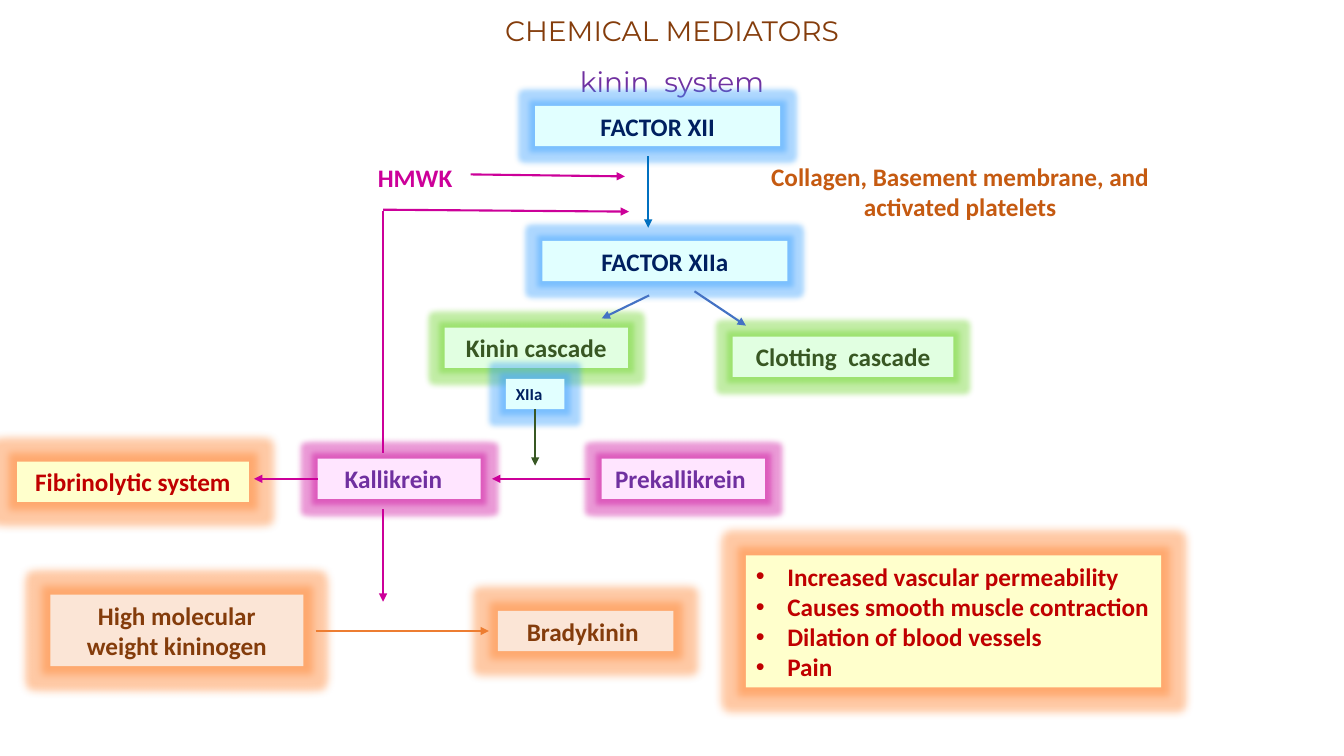
from dataclasses import dataclass

from lxml.etree import SubElement
from pptx import Presentation
from pptx.dml.color import RGBColor
from pptx.enum.shapes import MSO_CONNECTOR as Connector, MSO_SHAPE as Shape
from pptx.enum.text import MSO_ANCHOR as Anchor, MSO_AUTO_SIZE as AutoSize, PP_ALIGN as Align
from pptx.oxml.ns import qn
from pptx.util import Pt


@dataclass(frozen=True)
class Style:
    fill: str
    ink: str
    glow: str
    radius: float


@dataclass(frozen=True)
class Theme:
    factor = Style("E1FFFF", "002060", "5B9BD5", 8)
    cascade = Style("E1FFE1", "385723", "70AD47", 8)
    enzyme = Style("FFE5FF", "7030A0", "CC0099", 8)
    effect = Style("FFFFCC", "C00000", "ED7D31", 12)
    kinin = Style("FBE5D6", "843C0B", "ED7D31", 12)
    title_ink: str = "843C0B"
    subtitle_ink: str = "7030A0"
    trigger_ink: str = "C55A11"
    magenta: str = "CC0099"
    activation: str = "0070C0"
    branch: str = "4472C4"
    conversion: str = "385723"
    release: str = "ED7D31"
    title_font: str = "Montserrat"
    body_font: str = "Calibri"
    title_size: float = 20
    body_size: float = 18
    small_size: float = 12
    line_width: float = 1.5
    box_height: float = 28.8
    bullet_indent: float = 22.5


THEME = Theme()


def color(code):
    return RGBColor.from_string(code)


def add_title(page, first, second):
    title = page.shapes.title
    title.left, title.top, title.width, title.height = Pt(66), Pt(0), Pt(828), Pt(67.7)
    frame = title.text_frame
    frame.auto_size = AutoSize.NONE
    frame.vertical_anchor = Anchor.MIDDLE
    para = frame.paragraphs[0]
    para.alignment = Align.CENTER
    para.line_spacing = 1.5
    para.font.name = THEME.title_font
    para.font.size = Pt(THEME.title_size)
    span = para.add_run()
    span.text = first
    span.font.color.rgb = color(THEME.title_ink)
    para.add_line_break()
    span = para.add_run()
    span.text = second
    span.font.color.rgb = color(THEME.subtitle_ink)


def add_bullet(para):
    props = para._p.get_or_add_pPr()
    props.set("marL", str(Pt(THEME.bullet_indent)))
    props.set("indent", str(-Pt(THEME.bullet_indent)))
    SubElement(props, qn("a:buFont"), typeface="Arial")
    SubElement(props, qn("a:buChar"), char="•")


def write(box, lines, ink, size, align, bullets=False):
    frame = box.text_frame
    frame.word_wrap = True
    frame.auto_size = AutoSize.SHAPE_TO_FIT_TEXT
    frame.text = "\n".join(lines)
    for para in frame.paragraphs:
        para.alignment = align
        if bullets:
            add_bullet(para)
        para.font.name = THEME.body_font
        para.font.size = Pt(size)
        para.font.bold = True
        para.font.color.rgb = color(ink)


def add_glow(box, style):
    box.shadow.inherit = False
    effects = box._element.spPr.find(qn("a:effectLst"))
    glow = SubElement(effects, qn("a:glow"), rad=str(Pt(style.radius)))
    tint = SubElement(glow, qn("a:srgbClr"), val=style.glow)
    SubElement(tint, qn("a:satMod"), val="175000")
    SubElement(tint, qn("a:alpha"), val="40000")


def add_box(page, lines, style, left, top, width, height=THEME.box_height,
            size=THEME.body_size, align=Align.CENTER, bullets=False, nudge=0):
    box = page.shapes.add_shape(Shape.RECTANGLE, Pt(left), Pt(top), Pt(width), Pt(height))
    box.fill.solid()
    box.fill.fore_color.rgb = color(style.fill)
    box.line.fill.background()
    add_glow(box, style)
    write(box, lines, style.ink, size, align, bullets)
    box.text_frame.margin_right = Pt(7.2 + nudge)
    return box


def add_label(page, text, ink, left, top, width, height, align):
    label = page.shapes.add_textbox(Pt(left), Pt(top), Pt(width), Pt(height))
    write(label, [text], ink, THEME.body_size, align)


def add_line(page, ink, start, end, arrow=True):
    line = page.shapes.add_connector(Connector.STRAIGHT, *map(Pt, start + end))
    line.line.color.rgb = color(ink)
    line.line.width = Pt(THEME.line_width)
    props = line._element.spPr
    if arrow:
        SubElement(props.find(qn("a:ln")), qn("a:tailEnd"), type="triangle")
    SubElement(props, qn("a:effectLst"))
    return line


def main():
    deck = Presentation()
    deck.slide_width, deck.slide_height = Pt(960), Pt(540)
    page = deck.slides.add_slide(deck.slide_layouts[5])
    add_title(page, "CHEMICAL MEDIATORS", "kinin  system")

    add_box(page, ["FACTOR XII"], THEME.factor, 382.3, 75.6, 175)
    add_label(page, "Collagen, Basement membrane, and activated platelets",
              THEME.trigger_ink, 532.8, 111.6, 306, 51.1, Align.CENTER)
    add_box(page, ["FACTOR XIIa"], THEME.factor, 387.4, 172.1, 175)
    add_box(page, ["Kinin cascade"], THEME.cascade, 317.5, 234, 131)
    add_box(page, ["Clotting  cascade"], THEME.cascade, 523.4, 240.5, 157.7)
    add_box(page, ["Prekallikrein"], THEME.enzyme, 429.8, 327.6, 116.6, nudge=4)
    kallikrein = add_box(page, ["Kallikrein"], THEME.enzyme, 226.8, 327.6, 116.6, nudge=8)
    add_box(page, ["Fibrinolytic system"], THEME.effect, 12.2, 329.8, 165.6)
    add_box(page, ["High molecular weight kininogen"], THEME.kinin, 36, 424.8, 180.7, 51.1)
    add_box(page, ["Bradykinin"], THEME.kinin, 355.7, 436.3, 125.3, nudge=4)
    add_box(page, ["Increased vascular permeability", "Causes smooth muscle contraction",
                   "Dilation of blood vessels", "Pain"],
            THEME.effect, 532.8, 396.7, 296.6, 94.3, align=Align.LEFT, bullets=True)
    cofactor = add_box(page, ["XIIa"], THEME.factor, 361.4, 270.7, 41.8, 21.6,
                       THEME.small_size, Align.LEFT)
    add_label(page, "HMWK", THEME.magenta, 262.8, 112.3, 154.8, 28.8, Align.LEFT)

    add_line(page, THEME.magenta, (273.6, 323.3), (273.6, 150.5), arrow=False)
    for ink, start, end in (
        (THEME.magenta, (273.6, 149.8), (449.3, 151.2)),
        (THEME.magenta, (336.2, 124.6), (446.4, 126)),
        (THEME.activation, (463, 111.6), (463, 162.7)),
        (THEME.branch, (463.7, 211), (429.8, 227.5)),
        (THEME.branch, (496.1, 208.1), (532.8, 232.6)),
        (THEME.magenta, (421.2, 342), (351.4, 342)),
        (THEME.release, (225.4, 450.7), (349.2, 450.7)),
        (THEME.magenta, (273.6, 363.6), (273.6, 429.8)),
    ):
        add_line(page, ink, start, end)
    conversion = add_line(page, THEME.conversion, (382.3, 292.3), (382.3, 332.6))
    conversion.begin_connect(cofactor, 2)
    fibrinolysis = add_line(page, THEME.magenta, (226.8, 342), (181.4, 342))
    fibrinolysis.begin_connect(kallikrein, 1)

    deck.save("out.pptx")


if __name__ == "__main__":
    main()
